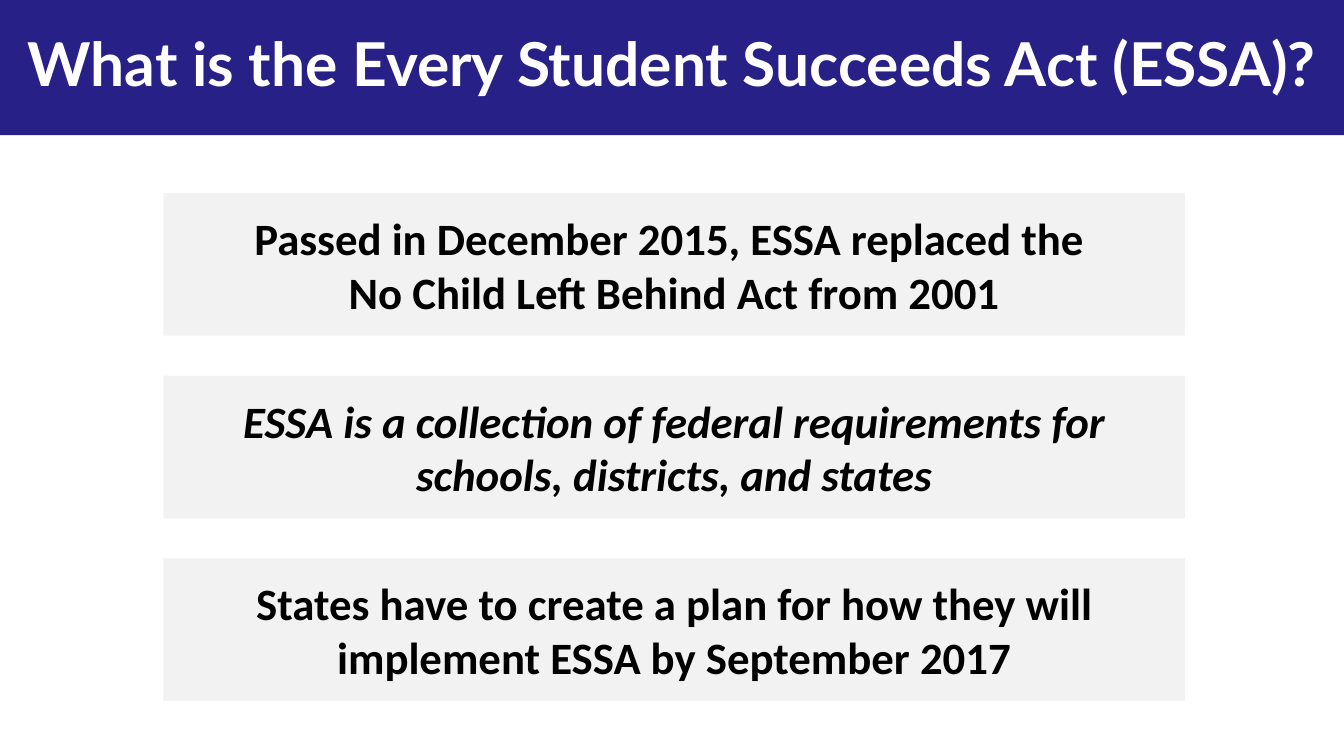
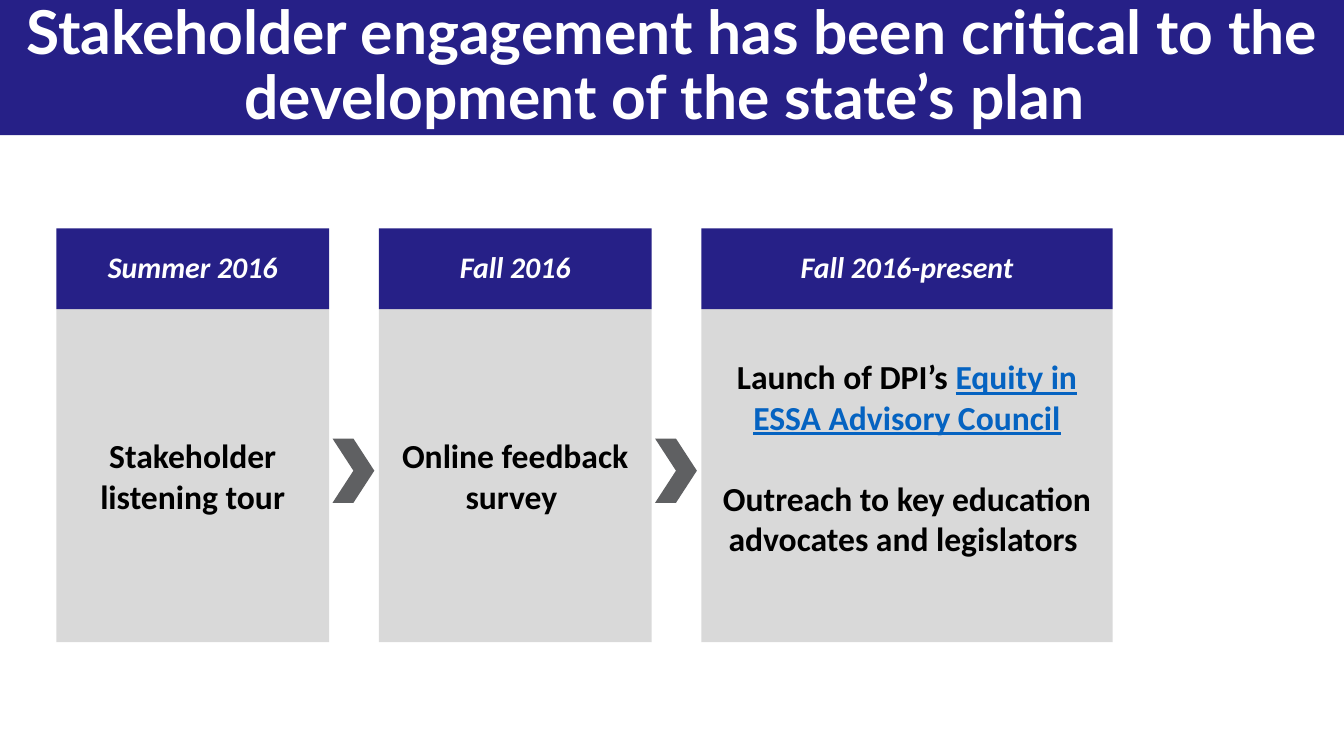
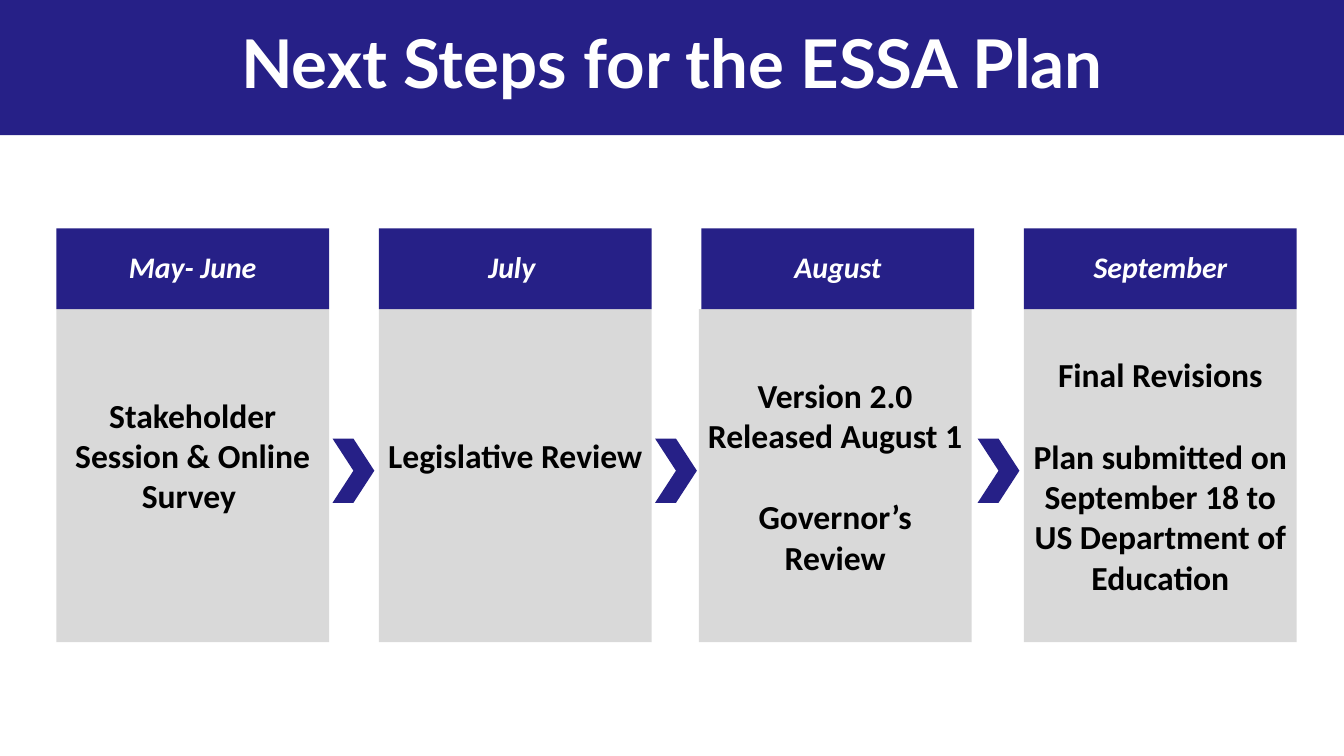
"""Build three slides on the ESSA state plan: what it is, engagement and next steps."""
import pptx
import pptx.dml.color
import pptx.enum.shapes
import pptx.enum.text
import pptx.util

Pt = pptx.util.Pt
SHAPES = pptx.enum.shapes.MSO_SHAPE

COLORS = {
    "navy": "262087",
    "white": "FFFFFF",
    "black": "000000",
    "fact": "F2F2F2",
    "panel": "D9D9D9",
    "slate": "5F6062",
    "link": "0563C1",
}

FACTS = {
    "title": ("What is the Every Student Succeeds Act (ESSA)?", 32.4),
    "facts": [
        (["Passed in December 2015, ESSA replaced the ",
          "No Child Left Behind Act from 2001"], False),
        (["ESSA is a collection of federal requirements for schools, districts, and states"], True),
        (["States have to create a plan for how they will implement ESSA by September 2017"], False),
    ],
}

TIMELINES = [
    {
        "title": ("Stakeholder engagement has been critical to the development of the state’s plan ", 32.4),
        "arrow": "slate",
        "steps": [
            {"when": "Summer 2016", "what": ["Stakeholder listening tour"]},
            {"when": "Fall 2016", "what": ["Online feedback survey "]},
            {"when": "Fall 2016-present", "width": 220.32, "lift": 19.5,
             "what": [[("Launch of DPI’s ", {}),
                       ("Equity in ESSA Advisory Council", {"color": "link", "underline": True})],
                      "Outreach to key education advocates and legislators "]},
        ],
    },
    {
        "title": ("Next Steps for the ESSA Plan", 36),
        "arrow": "navy",
        "steps": [
            {"when": "May- June", "lift": 22, "what": ["Stakeholder Session & Online Survey "]},
            {"when": "July ", "lift": 22, "what": ["Legislative Review"]},
            {"when": "August", "shift": -1.44,
             "what": ["Version 2.0 Released August 1", "Governor’s Review"]},
            {"when": "September",
             "what": ["Final Revisions",
                      "Plan submitted on September 18 to US Department of Education"]},
        ],
    },
]

SLIDE_WIDTH, SLIDE_HEIGHT = 720, 405
BAND_HEIGHT = 72.5
FACT_LEFT, FACT_TOP, FACT_WIDTH, FACT_HEIGHT, FACT_PITCH = 87.6, 103.5, 547.2, 76.4, 97.8
STEP_LEFT, STEP_WIDTH, STEP_PITCH = 30.2, 146.16, 172.8
HEADING_TOP, HEADING_HEIGHT, PANEL_HEIGHT = 122.4, 43.2, 178.4
PANEL_TOP = HEADING_TOP + HEADING_HEIGHT
ARROW_GAP, ARROW_TOP, ARROW_WIDTH, ARROW_HEIGHT = 1.8, 235, 22.4, 34.4
BLANK_LINE = 22


def rgb(name):
    return pptx.dml.color.RGBColor.from_string(COLORS[name])


def add_block(slide, box, fill, kind=SHAPES.RECTANGLE):
    block = slide.shapes.add_shape(kind, *map(Pt, box))
    block.shadow.inherit = False
    block.fill.solid()
    block.fill.fore_color.rgb = rgb(fill)
    block.line.fill.background()
    return block


def write(shape, paragraphs, size, color="black", font="Calibri", italic=False,
          inset=None, lift=0, gap=0, spacing=None):
    frame = shape.text_frame
    frame.word_wrap = True
    frame.vertical_anchor = pptx.enum.text.MSO_ANCHOR.MIDDLE
    if inset is not None:
        frame.margin_left = frame.margin_right = frame.margin_top = Pt(inset)
        frame.margin_bottom = Pt(inset + lift)
    for number, content in enumerate(paragraphs):
        paragraph = frame.add_paragraph() if number else frame.paragraphs[0]
        paragraph.alignment = pptx.enum.text.PP_ALIGN.CENTER
        if number and gap:
            paragraph.space_before = Pt(gap)
        if spacing:
            paragraph.line_spacing = spacing
        for text, style in [(content, {})] if isinstance(content, str) else content:
            run = paragraph.add_run()
            run.text = text
            run.font.name = font
            run.font.size = Pt(size)
            run.font.bold = True
            run.font.italic = italic
            run.font.underline = style.get("underline", False)
            run.font.color.rgb = rgb(style.get("color", color))


def add_titled_slide(deck, title):
    slide = deck.slides.add_slide(deck.slide_layouts[6])
    add_block(slide, (-0.5, 0, SLIDE_WIDTH + 0.5, BAND_HEIGHT), "navy")
    heading = slide.shapes.add_textbox(0, 0, Pt(SLIDE_WIDTH), Pt(72))
    text, size = title
    write(heading, [text], size, "white", "Lato", spacing=0.9)
    return slide


def add_facts(deck, content):
    slide = add_titled_slide(deck, content["title"])
    for row, (lines, italic) in enumerate(content["facts"]):
        box = (FACT_LEFT, FACT_TOP + row * FACT_PITCH, FACT_WIDTH, FACT_HEIGHT)
        write(add_block(slide, box, "fact"), lines, 24, italic=italic)


def add_timeline(deck, content):
    slide = add_titled_slide(deck, content["title"])
    for column, step in enumerate(content["steps"]):
        left = STEP_LEFT + column * STEP_PITCH
        width = step.get("width", STEP_WIDTH)
        panel = add_block(slide, (left + step.get("shift", 0), PANEL_TOP, width, PANEL_HEIGHT), "panel")
        write(panel, step["what"], 18, inset=3.6, lift=step.get("lift", 0), gap=BLANK_LINE)
        heading = add_block(slide, (left, HEADING_TOP, width, HEADING_HEIGHT), "navy")
        write(heading, [step["when"]], 16, "white", italic=True, inset=5, spacing=0.9)
        if column:
            arrow_left = left - STEP_PITCH + STEP_WIDTH + ARROW_GAP
            add_block(slide, (arrow_left, ARROW_TOP, ARROW_WIDTH, ARROW_HEIGHT),
                      content["arrow"], SHAPES.CHEVRON)


def main():
    deck = pptx.Presentation()
    deck.slide_width, deck.slide_height = Pt(SLIDE_WIDTH), Pt(SLIDE_HEIGHT)
    add_facts(deck, FACTS)
    for timeline in TIMELINES:
        add_timeline(deck, timeline)
    deck.save("out.pptx")


if __name__ == "__main__":
    main()
